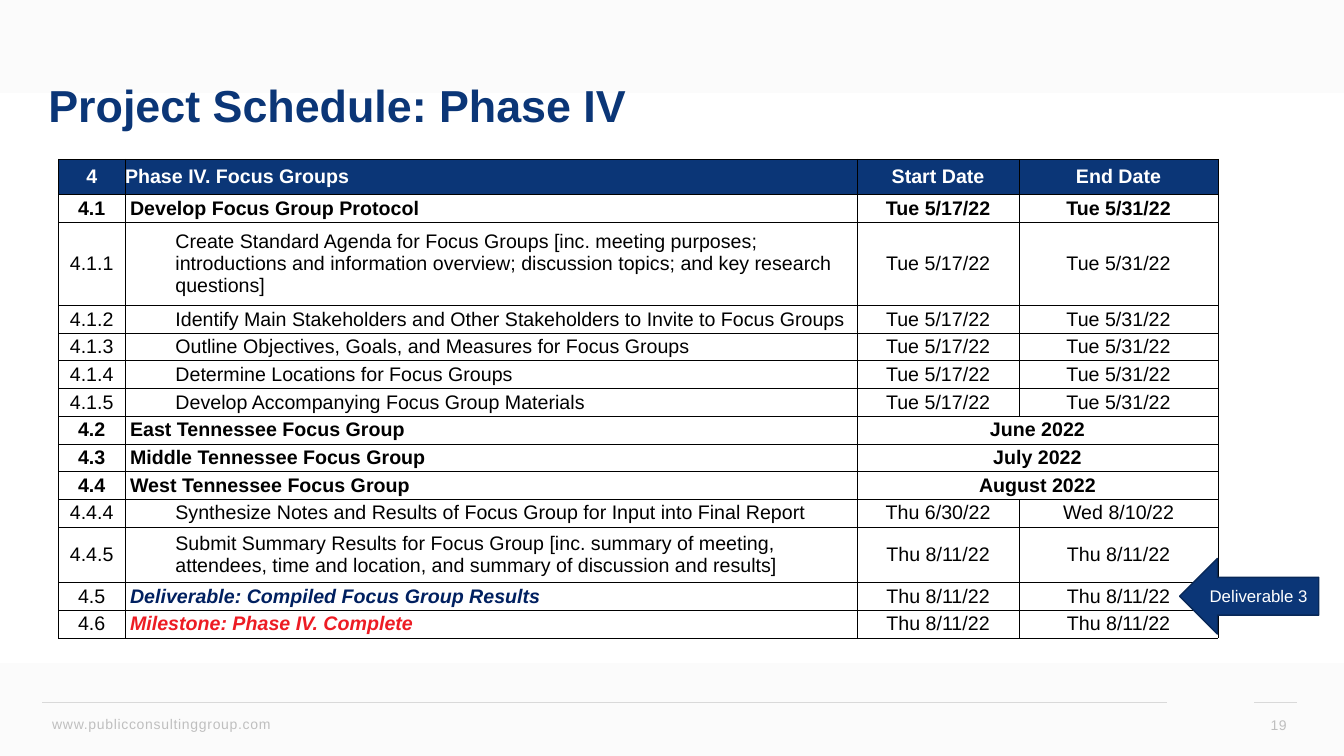
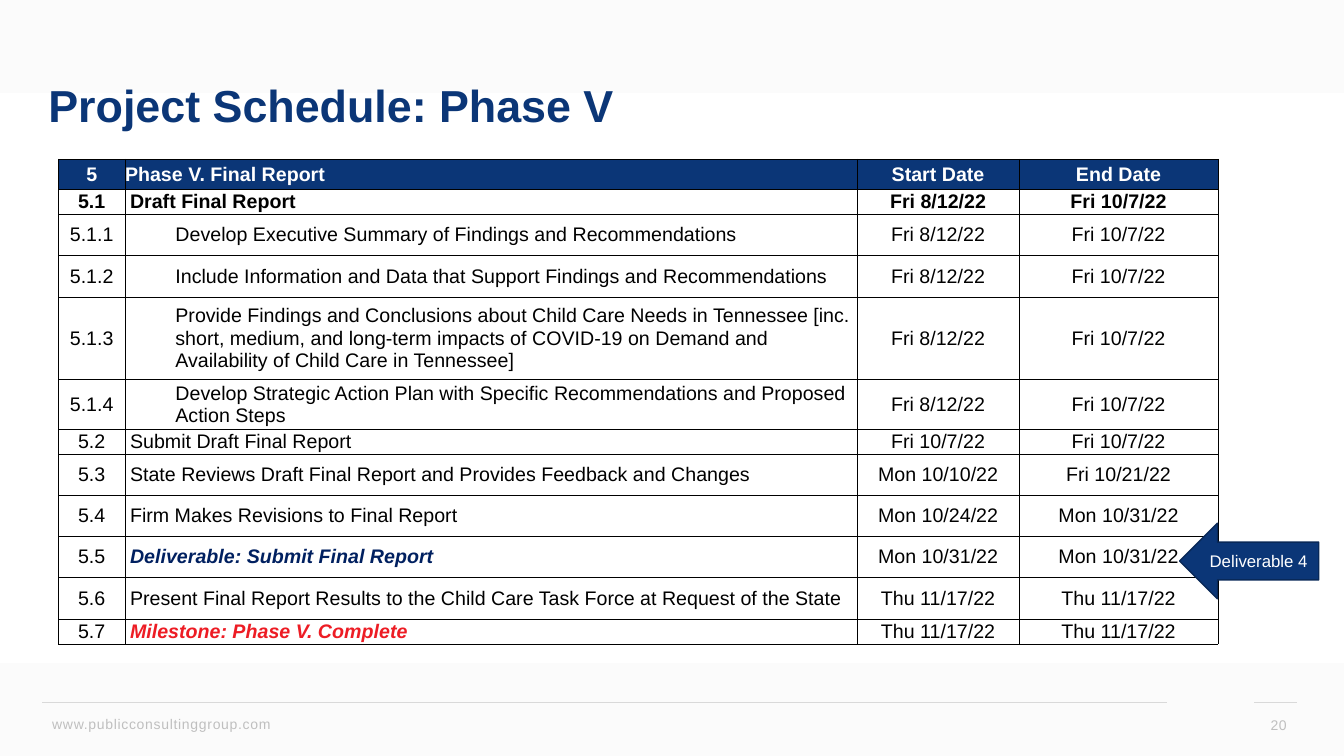
from dataclasses import dataclass
from enum import Enum
from typing import NamedTuple

from lxml.etree import SubElement
from pptx import Presentation
from pptx.dml.color import RGBColor
from pptx.enum.shapes import MSO_CONNECTOR, MSO_SHAPE
from pptx.enum.text import MSO_ANCHOR, PP_ALIGN
from pptx.oxml.ns import qn
from pptx.util import Inches, Pt

WIDTH, HEIGHT = 13.33, 7.5
FONT = "Arial"
COLORS = {
    "navy": "0B3677", "outline": "082858", "deliverable": "002060",
    "milestone": "ED1C24", "black": "000000", "white": "FFFFFF",
    "band": "FBFBFB", "rule": "D9D9D9", "footer": "BFBFBF",
}
COLUMNS = (0.66, 7.26, 1.61, 1.97)
TABLE_LEFT, TABLE_TOP = 0.58, 1.58
BAND_HEIGHT = 1.85
RULE_Y = 6.97
PAGE_LEFT, PAGE_RIGHT = 12.44, 12.86


class Look(NamedTuple):
    color: str = "black"
    bold: bool = False
    italic: bool = False
    indent: float = 0.05


class Kind(Enum):
    HEAD = Look("white", bold=True, indent=0)
    SECTION = Look(bold=True)
    TASK = Look(indent=0.5)
    STEP = Look()
    DELIVERABLE = Look("deliverable", bold=True, italic=True)
    MILESTONE = Look("milestone", bold=True, italic=True)


class Row(NamedTuple):
    """One schedule line; without an end, the start spans both date columns."""
    kind: Kind
    number: str
    name: str
    start: str
    end: str = ""
    share: float = 1


@dataclass
class Schedule:
    title: str
    page: int
    number: str
    phase: str
    head_height: float
    body_height: float
    rows: list[Row]
    arrow_text: str
    arrow_top: float


PHASE_IV_DATES = ("Tue 5/17/22", "Tue 5/31/22")
PHASE_V_DATES = ("Fri 8/12/22", "Fri 10/7/22")
PHASE_IV_END = ("Thu 8/11/22", "Thu 8/11/22")
PHASE_V_END = ("Thu 11/17/22", "Thu 11/17/22")
LOW = 0.6

SCHEDULES = [
    Schedule("Project Schedule: Phase IV", 19, "4", "Phase IV. Focus Groups", 0.35, 4.4, [
        Row(Kind.SECTION, "4.1", "Develop Focus Group Protocol", *PHASE_IV_DATES),
        Row(Kind.TASK, "4.1.1", "Create Standard Agenda for Focus Groups [inc. meeting purposes; "
            "introductions and information overview; discussion topics; and key research "
            "questions]", *PHASE_IV_DATES, share=3),
        Row(Kind.TASK, "4.1.2", "Identify Main Stakeholders and Other Stakeholders to Invite "
            "to Focus Groups", *PHASE_IV_DATES),
        Row(Kind.TASK, "4.1.3", "Outline Objectives, Goals, and Measures for Focus Groups",
            *PHASE_IV_DATES),
        Row(Kind.TASK, "4.1.4", "Determine Locations for Focus Groups", *PHASE_IV_DATES),
        Row(Kind.TASK, "4.1.5", "Develop Accompanying Focus Group Materials", *PHASE_IV_DATES),
        Row(Kind.SECTION, "4.2", "East Tennessee Focus Group", "June 2022"),
        Row(Kind.SECTION, "4.3", "Middle Tennessee Focus Group", "July 2022"),
        Row(Kind.SECTION, "4.4", "West Tennessee Focus Group", "August 2022"),
        Row(Kind.TASK, "4.4.4", "Synthesize Notes and Results of Focus Group for Input into "
            "Final Report", "Thu 6/30/22", "Wed 8/10/22"),
        Row(Kind.TASK, "4.4.5", "Submit Summary Results for Focus Group [inc. summary of "
            "meeting, attendees, time and location, and summary of discussion and results]",
            *PHASE_IV_END, share=2),
        Row(Kind.DELIVERABLE, "4.5", "Deliverable: Compiled Focus Group Results", *PHASE_IV_END),
        Row(Kind.MILESTONE, "4.6", "Milestone: Phase IV. Complete", *PHASE_IV_END),
    ], "Deliverable 3", 5.54),
    Schedule("Project Schedule: Phase V", 20, "5", "Phase V. Final Report", 0.3, 4.51, [
        Row(Kind.SECTION, "5.1", "Draft Final Report", *PHASE_V_DATES, share=LOW),
        Row(Kind.TASK, "5.1.1", "Develop Executive Summary of Findings and Recommendations",
            *PHASE_V_DATES),
        Row(Kind.TASK, "5.1.2", "Include Information and Data that Support Findings and "
            "Recommendations", *PHASE_V_DATES),
        Row(Kind.TASK, "5.1.3", "Provide Findings and Conclusions about Child Care Needs in "
            "Tennessee [inc. short, medium, and long-term impacts of COVID-19 on Demand and "
            "Availability of Child Care in Tennessee]", *PHASE_V_DATES, share=2),
        Row(Kind.TASK, "5.1.4", "Develop Strategic Action Plan with Specific Recommendations "
            "and Proposed Action Steps", *PHASE_V_DATES, share=2 * LOW),
        Row(Kind.STEP, "5.2", "Submit Draft Final Report", "Fri 10/7/22", "Fri 10/7/22",
            share=LOW),
        Row(Kind.STEP, "5.3", "State Reviews Draft Final Report and Provides Feedback and "
            "Changes", "Mon 10/10/22", "Fri 10/21/22"),
        Row(Kind.STEP, "5.4", "Firm Makes Revisions to Final Report",
            "Mon 10/24/22", "Mon 10/31/22"),
        Row(Kind.DELIVERABLE, "5.5", "Deliverable: Submit Final Report",
            "Mon 10/31/22", "Mon 10/31/22"),
        Row(Kind.STEP, "5.6", "Present Final Report Results to the Child Care Task Force at "
            "Request of the State", *PHASE_V_END),
        Row(Kind.MILESTONE, "5.7", "Milestone: Phase V. Complete", *PHASE_V_END, share=LOW),
    ], "Deliverable 4", 5.19),
]


def rgb(name: str) -> RGBColor:
    return RGBColor.from_string(COLORS[name])


def style(p, size: float, color: str, bold=False, italic=False, align=PP_ALIGN.LEFT) -> None:
    p.alignment = align
    f = p.font
    f.name, f.size, f.bold, f.italic = FONT, Pt(size), bold, italic
    f.color.rgb = rgb(color)


def add_band(s, top: float, angle: int):
    """Add a full-width band that fades to white in the direction of the angle."""
    sp = s.shapes.add_shape(MSO_SHAPE.RECTANGLE, 0, Inches(top), Inches(WIDTH),
                            Inches(BAND_HEIGHT))
    sp.shadow.inherit = False
    sp.line.fill.background()
    sp.fill.gradient()
    sp.fill.gradient_angle = angle
    for stop, color in zip(sp.fill.gradient_stops, ("band", "white")):
        stop.color.rgb = rgb(color)
    return sp


def add_rule(s, left: float, right: float):
    line = s.shapes.add_connector(MSO_CONNECTOR.STRAIGHT, Inches(left), Inches(RULE_Y),
                                  Inches(right), Inches(RULE_Y))
    line.line.color.rgb = rgb("rule")
    line.line.width = Pt(0.5)
    SubElement(line.element.spPr, qn("a:effectLst"))
    return line


def add_footer_text(s, text: str, left: float, top: float, width: float, height: float,
                    align=PP_ALIGN.LEFT, anchor=MSO_ANCHOR.TOP):
    sp = s.shapes.add_textbox(Inches(left), Inches(top), Inches(width), Inches(height))
    tf = sp.text_frame
    tf.word_wrap, tf.vertical_anchor = True, anchor
    p = tf.paragraphs[0]
    r = p.add_run()
    r.text = text
    style(p, 10, "footer", align=align)
    r.font._element.set("spc", "50")
    return sp


def furnish_layout(s) -> None:
    """Draw the bands, rules and web address, then move them to the slide's layout."""
    shared = [
        add_band(s, 0, 270),
        add_band(s, HEIGHT - BAND_HEIGHT, 90),
        add_footer_text(s, "www.publicconsultinggroup.com", 0.42, 7.05, 3.87, 0.28),
        add_rule(s, 0.42, 11.57),
        add_rule(s, PAGE_LEFT, PAGE_RIGHT),
    ]
    tree = s.slide_layout.shapes.element
    for n, sp in enumerate(shared):
        sp.element.xpath(".//p:cNvPr")[0].set("id", str(100 + n))
        tree.insert(2 + n, sp.element)


def add_title(s, text: str) -> None:
    sp = s.shapes.title
    sp.left, sp.top, sp.width, sp.height = map(Inches, (0.38, 0.4, 12.52, 1.35))
    tf = sp.text_frame
    tf.text = text
    tf.vertical_anchor = MSO_ANCHOR.MIDDLE
    p = tf.paragraphs[0]
    style(p, 32, "navy", bold=True)
    p.line_spacing = 0.9


def add_borders(cell) -> None:
    tc_pr = cell._tc.get_or_add_tcPr()
    for side in ("lnL", "lnR", "lnT", "lnB"):
        ln = SubElement(tc_pr, qn(f"a:{side}"), w=str(Pt(0.5)))
        fill = SubElement(ln, qn("a:solidFill"))
        SubElement(fill, qn("a:srgbClr"), val=COLORS["black"])


def fill_cell(cell, text: str, kind: Kind, is_name: bool) -> None:
    look = kind.value
    accent = kind in (Kind.DELIVERABLE, Kind.MILESTONE)
    if accent and not is_name:
        look = Look()
    add_borders(cell)
    cell.fill.solid()
    cell.fill.fore_color.rgb = rgb("navy" if kind is Kind.HEAD else "white")
    cell.margin_top = cell.margin_bottom = cell.margin_right = 0
    cell.margin_left = Inches(look.indent if is_name else 0)
    cell.vertical_anchor = MSO_ANCHOR.MIDDLE
    cell.text = text
    style(cell.text_frame.paragraphs[0], 14, look.color, look.bold, look.italic,
          PP_ALIGN.LEFT if is_name else PP_ALIGN.CENTER)


def add_schedule_table(s, plan: Schedule) -> None:
    head = Row(Kind.HEAD, plan.number, plan.phase, "Start Date", "End Date")
    unit = plan.body_height / sum(row.share for row in plan.rows)
    heights = [plan.head_height] + [unit * row.share for row in plan.rows]
    table = s.shapes.add_table(len(heights), len(COLUMNS), Inches(TABLE_LEFT), Inches(TABLE_TOP),
                               Inches(sum(COLUMNS)), Inches(sum(heights))).table
    table.horz_banding = False
    for column, width in zip(table.columns, COLUMNS):
        column.width = Inches(width)
    for i, (row, height) in enumerate(zip([head, *plan.rows], heights)):
        table.rows[i].height = Inches(height)
        for j, text in enumerate((row.number, row.name, row.start, row.end)):
            fill_cell(table.cell(i, j), text, row.kind, is_name=j == 1)
        if not row.end:
            table.cell(i, 2).merge(table.cell(i, 3))


def add_arrow(s, text: str, top: float) -> None:
    sp = s.shapes.add_shape(MSO_SHAPE.LEFT_ARROW, Inches(11.7), Inches(top),
                            Inches(1.38), Inches(0.75))
    sp.shadow.inherit = False
    sp.fill.solid()
    sp.fill.fore_color.rgb = rgb("navy")
    sp.line.color.rgb = rgb("outline")
    sp.line.width = Pt(1)
    tf = sp.text_frame
    tf.text = text
    tf.vertical_anchor = MSO_ANCHOR.MIDDLE
    style(tf.paragraphs[0], 12, "white", align=PP_ALIGN.CENTER)


def main() -> None:
    prs = Presentation()
    prs.slide_width, prs.slide_height = Inches(WIDTH), Inches(HEIGHT)
    layout = prs.slide_layouts.get_by_name("Title Only")
    for i, plan in enumerate(SCHEDULES):
        s = prs.slides.add_slide(layout)
        if i == 0:
            furnish_layout(s)
        add_title(s, plan.title)
        add_footer_text(s, str(plan.page), PAGE_LEFT, 6.99, PAGE_RIGHT - PAGE_LEFT, 0.4,
                        PP_ALIGN.RIGHT, MSO_ANCHOR.MIDDLE)
        add_schedule_table(s, plan)
        add_arrow(s, plan.arrow_text, plan.arrow_top)
    prs.save("out.pptx")


if __name__ == "__main__":
    main()
